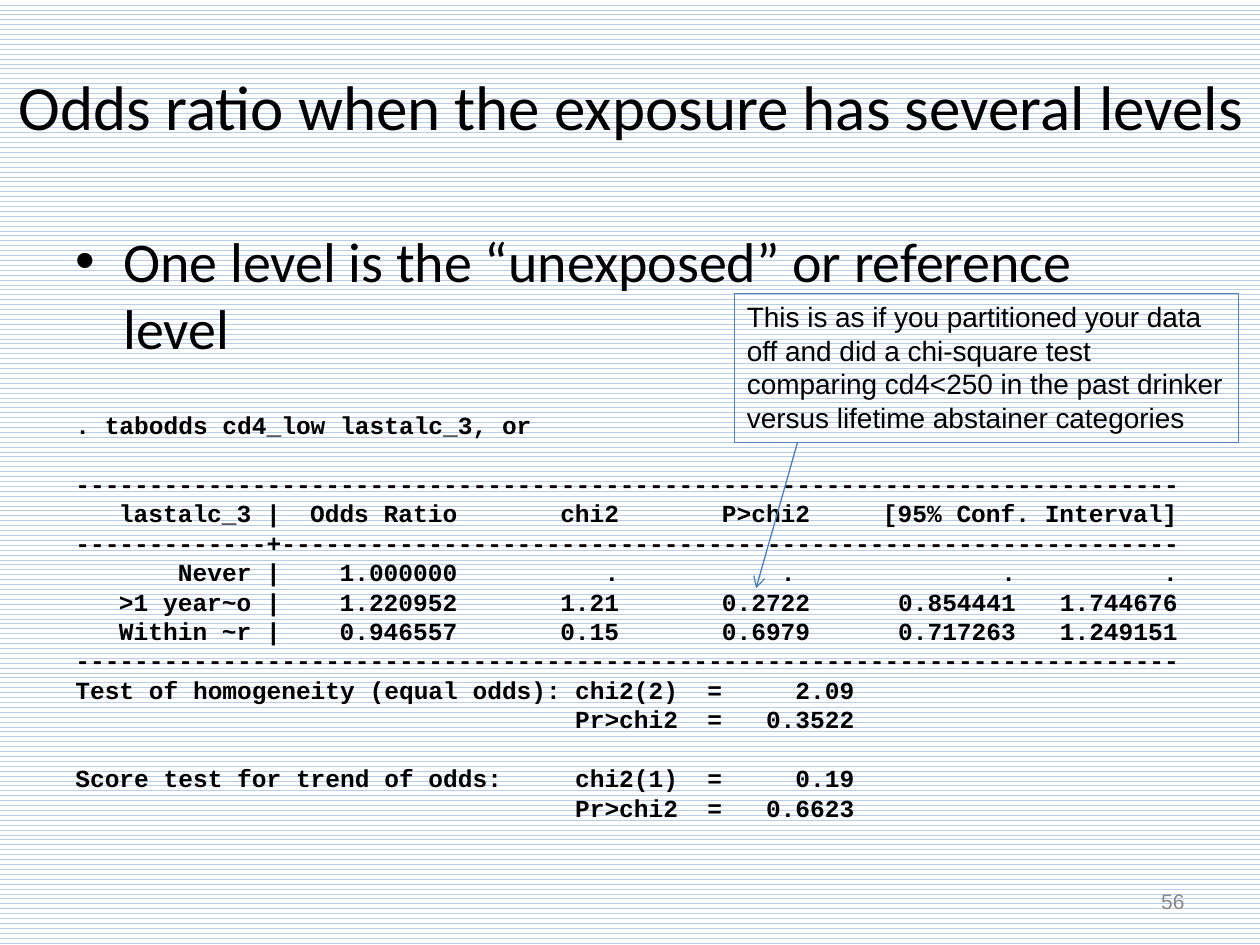
"""Build the slide on odds ratios for an exposure with several levels."""
import pptx
import pptx.dml.color
import pptx.enum.dml
import pptx.enum.shapes
import pptx.enum.text
import pptx.oxml.ns
import pptx.util
from lxml import etree

Inches, Pt = pptx.util.Inches, pptx.util.Pt
ALIGN = pptx.enum.text.PP_ALIGN
ANCHOR = pptx.enum.text.MSO_ANCHOR

TITLE = "Odds ratio when the exposure has several levels"
BULLET = "One level is the “unexposed” or reference level"
CALLOUT = ("This is as if you partitioned your data off and did a chi-square test "
           "comparing cd4<250 in the past drinker versus lifetime abstainer categories")
PAGE_NUMBER = "56"

RULE = "-" * 75
SPLIT_RULE = "-" * 13 + "+" + "-" * 61
TABLE_STOPS = [(14, "r"), (26, "r"), (37, "r"), (50, "r"), (64, "r"), (75, "r")]
HEADER_STOPS = TABLE_STOPS[:4] + TABLE_STOPS[5:]
TEST_STOPS = [(34, "l"), (44, "r"), (53, "r")]
CHARACTER = 0.6 * 14 / 72
LINE = 16.8

OUTPUT = [
    ([". tabodds cd4_low lastalc_3, or"], [], 28),
    ([RULE], [], LINE),
    (["lastalc_3 |", "Odds Ratio", "chi2", "P>chi2", "[95% Conf. Interval]"], HEADER_STOPS, 0),
    ([SPLIT_RULE], [], 0),
    (["Never |", "1.000000", ".", ". ", ".", "."], TABLE_STOPS, 0),
    ([">1 year~o |", "1.220952", "1.21", "0.2722", "0.854441", "1.744676"], TABLE_STOPS, 0),
    (["Within ~r |", "0.946557", "0.15", "0.6979", "0.717263", "1.249151"], TABLE_STOPS, 0),
    ([RULE], [], 0),
    (["Test of homogeneity (equal odds):", "chi2(2)", "=", "2.09"], TEST_STOPS, 0),
    (["", "Pr>chi2", "=", "0.3522"], TEST_STOPS, 0),
    (["Score test for trend of odds:", "chi2(1)", "=", "0.19"], TEST_STOPS, LINE),
    (["", "Pr>chi2", "=", "0.6623"], TEST_STOPS, 0),
]


def color(value):
    return pptx.dml.color.RGBColor.from_string(value)


def child(parent, tag, **attributes):
    return etree.SubElement(parent, pptx.oxml.ns.qn(tag), **attributes)


def write(frame, text, size, font="Arial", fill="000000", bold=False, align=ALIGN.LEFT,
          before=0, line=None, added=False):
    paragraph = frame.add_paragraph() if added else frame.paragraphs[0]
    paragraph.alignment = align
    paragraph.space_before = Pt(before)
    if line:
        paragraph.line_spacing = Pt(line)
    span = paragraph.add_run()
    span.text = text
    span.font.size, span.font.name, span.font.bold = Pt(size), font, bold
    span.font.color.rgb = color(fill)
    return paragraph


def text_box(page, left, top, width, height, anchor=ANCHOR.TOP):
    box = page.shapes.add_textbox(Inches(left), Inches(top), Inches(width), Inches(height))
    box.text_frame.word_wrap = True
    box.text_frame.vertical_anchor = anchor
    return box


def add_bullet(paragraph):
    properties = paragraph._p.get_or_add_pPr()
    properties.set("marL", str(Inches(0.38)))
    properties.set("indent", str(-Inches(0.38)))
    child(properties, "a:buFont", typeface="Arial")
    child(properties, "a:buChar", char="•")


def add_tabs(paragraph, stops):
    tabs = child(paragraph._p.get_or_add_pPr(), "a:tabLst")
    for column, side in stops:
        child(tabs, "a:tab", pos=str(Inches(column * CHARACTER)), algn=side)


def add_title(page):
    title = page.shapes.title
    title.left, title.top = Inches(0.01), Inches(0.21)
    title.width, title.height = Inches(10), Inches(1.25)
    title.text_frame.vertical_anchor = ANCHOR.MIDDLE
    title.text_frame.auto_size = pptx.enum.text.MSO_AUTO_SIZE.NONE
    write(title.text_frame, TITLE, 36, font="Calibri", align=ALIGN.CENTER)


def add_body(page):
    frame = text_box(page, 0.5, 1.75, 9, 5.42).text_frame
    add_bullet(write(frame, BULLET, 32, font="Calibri"))
    for cells, stops, gap in OUTPUT:
        lead = "\t" if stops and stops[0][1] == "r" else ""
        paragraph = write(frame, lead + "\t".join(cells), 14, font="Courier New", bold=True,
                          before=gap, line=LINE, added=True)
        if stops:
            add_tabs(paragraph, stops)


def add_callout(page):
    box = text_box(page, 5.83, 2.33, 4, 1.18)
    box.line.color.rgb = color("4F81BD")
    box.line.width = Pt(0.75)
    write(box.text_frame, CALLOUT, 16)
    arrow = page.shapes.add_connector(pptx.enum.shapes.MSO_CONNECTOR.STRAIGHT,
                                      Inches(6.33), Inches(3.51), Inches(6), Inches(4.67))
    arrow.line.color.rgb = color("4B7EBC")
    arrow.line.width = Pt(0.75)
    child(arrow.line._get_or_add_ln(), "a:tailEnd", type="arrow")
    child(arrow._element.spPr, "a:effectLst")


def main():
    deck = pptx.Presentation()
    deck.slide_width, deck.slide_height = Inches(10), Inches(7.5)
    page = deck.slides.add_slide(deck.slide_layouts[5])
    backdrop = page.background.fill
    backdrop.patterned()
    backdrop.pattern = pptx.enum.dml.MSO_PATTERN.WAVE
    backdrop.fore_color.rgb = color("B9CDE5")
    backdrop.back_color.rgb = color("FFFFFF")
    add_title(page)
    add_body(page)
    number = text_box(page, 7.17, 6.95, 2.33, 0.4, anchor=ANCHOR.MIDDLE)
    write(number.text_frame, PAGE_NUMBER, 12, fill="898989", align=ALIGN.RIGHT)
    add_callout(page)
    deck.save("out.pptx")


if __name__ == "__main__":
    main()
